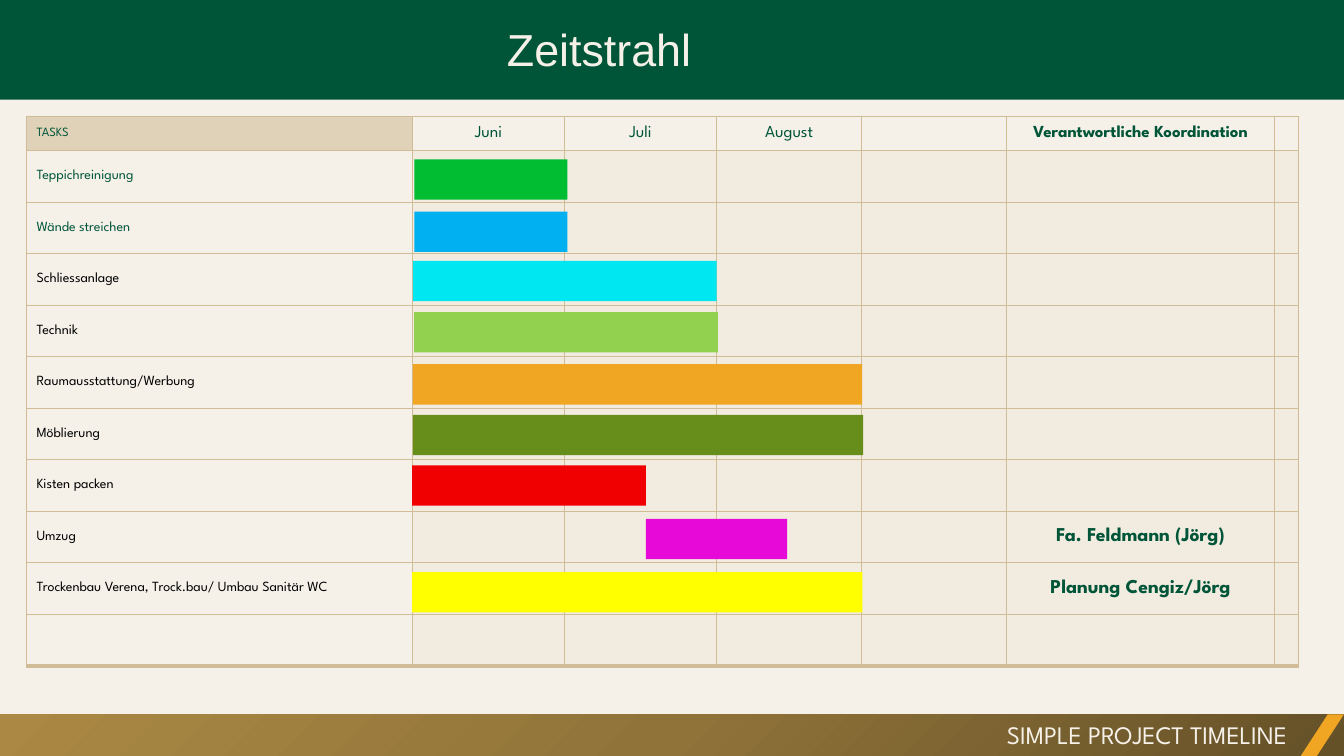
from dataclasses import dataclass

from pptx import Presentation
from pptx.dml.color import RGBColor as RGB
from pptx.enum.shapes import MSO_SHAPE as SHAPE
from pptx.enum.text import MSO_ANCHOR as ANCHOR, PP_ALIGN as ALIGN
from pptx.oxml import parse_xml
from pptx.oxml.ns import qn
from pptx.util import Pt
from lxml.etree import SubElement


@dataclass(frozen=True)
class Theme:
    cream: str = "F5F1E9"
    green: str = "005538"
    black: str = "000000"
    sand: str = "DFD2B8"
    grid: str = "D0BD97"
    cell: str = "EEE7D9"
    amber: str = "F0A622"
    face: str = "League Spartan"
    plain: str = "Arial"
    title: int = 32
    foot: int = 18
    lead: int = 14
    month: int = 12
    task: int = 10
    head: int = 9


theme = Theme()
NS = 'xmlns:a="http://schemas.openxmlformats.org/drawingml/2006/main"'

deck = Presentation()
deck.slide_width, deck.slide_height = Pt(960), Pt(540)
slide = deck.slides.add_slide(deck.slide_layouts[6])
slide.background.fill.solid()
slide.background.fill.fore_color.rgb = RGB.from_string(theme.cream)


def block(kind, left, top, width, height, color):
    shape = slide.shapes.add_shape(kind, Pt(left), Pt(top), Pt(width), Pt(height))
    shape.shadow.inherit = False
    shape.fill.solid()
    shape.fill.fore_color.rgb = RGB.from_string(color)
    shape.line.fill.background()
    return shape


def write(frame, text, size, color, face=theme.face, align=ALIGN.LEFT, bold=False):
    para = frame.paragraphs[0]
    para.text = text
    para.alignment = align
    font = para.font
    font.size, font.name, font.bold = Pt(size), face, bold
    font.color.rgb = RGB.from_string(color)


# Title band
block(SHAPE.RECTANGLE, 0, -3.6, 960, 74.9, theme.green)
box = slide.shapes.add_textbox(Pt(355), Pt(12.2), Pt(207.4), Pt(46))
box.text_frame.word_wrap = True
write(box.text_frame, "Zeitstrahl", theme.title, theme.cream, theme.plain)

# Footer band with gradient
foot = block(SHAPE.RECTANGLE, 0, 510.2, 960, 30, theme.grid)
stops = "".join(
    f'<a:gs pos="{pos}000"><a:srgbClr val="{color}"/></a:gs>'
    for pos, color in ((0, "655128"), (50, "907339"), (100, "AB8944"))
)
grad = parse_xml(
    f'<a:gradFill {NS} rotWithShape="1"><a:gsLst>{stops}</a:gsLst>'
    '<a:path path="circle"><a:fillToRect l="100000" t="100000"/></a:path></a:gradFill>'
)
props = foot.fill._xPr
props.replace(props.find(qn("a:solidFill")), grad)
slash = block(SHAPE.PARALLELOGRAM, 929, 510.2, 31, 30, theme.amber)
slash.adjustments[0] = 0.65
box = slide.shapes.add_textbox(Pt(378), Pt(510), Pt(548.6), Pt(29))
box.text_frame.word_wrap = True
write(box.text_frame, "SIMPLE PROJECT TIMELINE", theme.foot, theme.cream, align=ALIGN.RIGHT)

# Table content
heads = ["TASKS", "Juni", "Juli", "August", "", "Verantwortliche Koordination", ""]
tasks = [
    "Teppichreinigung", "Wände streichen", "Schliessanlage", "Technik",
    "Raumausstattung/Werbung", "Möblierung", "Kisten packen", "Umzug",
    "Trockenbau Verena, Trock.bau/ Umbau Sanitär WC", "",
]
leads = {8: "Fa. Feldmann (Jörg)", 9: "Planung Cengiz/Jörg"}
cols = [275.8, 108.6, 108.6, 103.6, 103.6, 191.4, 16.9]
rows = [24.1] + [36.85] * len(tasks)

# Table grid
frame = slide.shapes.add_table(
    len(rows), len(cols), Pt(18.9), Pt(83.3), Pt(sum(cols)), Pt(sum(rows))
)
table = frame.table
table.first_row = table.horz_banding = False
for col, width in zip(table.columns, cols):
    col.width = Pt(width)
for row, height in zip(table.rows, rows):
    row.height = Pt(height)

for r in range(len(rows)):
    for c in range(len(cols)):
        cell = table.cell(r, c)
        cell.vertical_anchor = ANCHOR.MIDDLE
        align = ALIGN.CENTER if c else ALIGN.LEFT
        text, size, color, bold = "", theme.month, theme.green, False
        if r == 0:
            text, bold = heads[c], c == 5
            size = theme.month if c else theme.head
            fill, alpha = (theme.cream, 75) if c else (theme.sand, 100)
        elif c == 0:
            text, size = tasks[r - 1], theme.task
            color = theme.green if r < 3 else theme.black
            fill, alpha = theme.cream, 100
        else:
            fill, alpha = theme.cell, 50
            if c == 5 and r in leads:
                text, size, bold = leads[r], theme.lead, True
                cell.margin_left = cell.margin_right = 0
                cell.margin_top = cell.margin_bottom = 0
        write(cell.text_frame, text, size, color, align=align, bold=bold)

        # Fill and borders
        cell.fill.solid()
        cell.fill.fore_color.rgb = RGB.from_string(fill)
        props = cell._tc.get_or_add_tcPr()
        if alpha < 100:
            tint = props.find(qn("a:solidFill")).find(qn("a:srgbClr"))
            SubElement(tint, qn("a:alpha")).set("val", str(alpha * 1000))
        for i, side in enumerate("LRTB"):
            thick = 3 if side == "B" and r == len(rows) - 1 else 0.5
            props.insert(i, parse_xml(
                f'<a:ln{side} {NS} w="{Pt(thick)}"><a:solidFill>'
                f'<a:srgbClr val="{theme.grid}"/></a:solidFill></a:ln{side}>'
            ))

# Task bars: left, top, width, colour
bars = [
    (295.9, 113.9, 109.4, "00BD32"),
    (295.9, 151.2, 109.4, "00B0F0"),
    (295, 186.3, 216.9, "00E7F2"),
    (295.9, 223, 216.9, "92D050"),
    (295, 260.2, 320.9, theme.amber),
    (295, 296.4, 321.6, "678E1B"),
    (294.4, 332.5, 167, "F10002"),
    (461.4, 370.7, 100.9, "E709D7"),
    (294.4, 408.6, 321.6, "FFFF00"),
]
for left, top, width, color in bars:
    block(SHAPE.RECTANGLE, left, top, width, 28.8, color)

deck.save("out.pptx")
